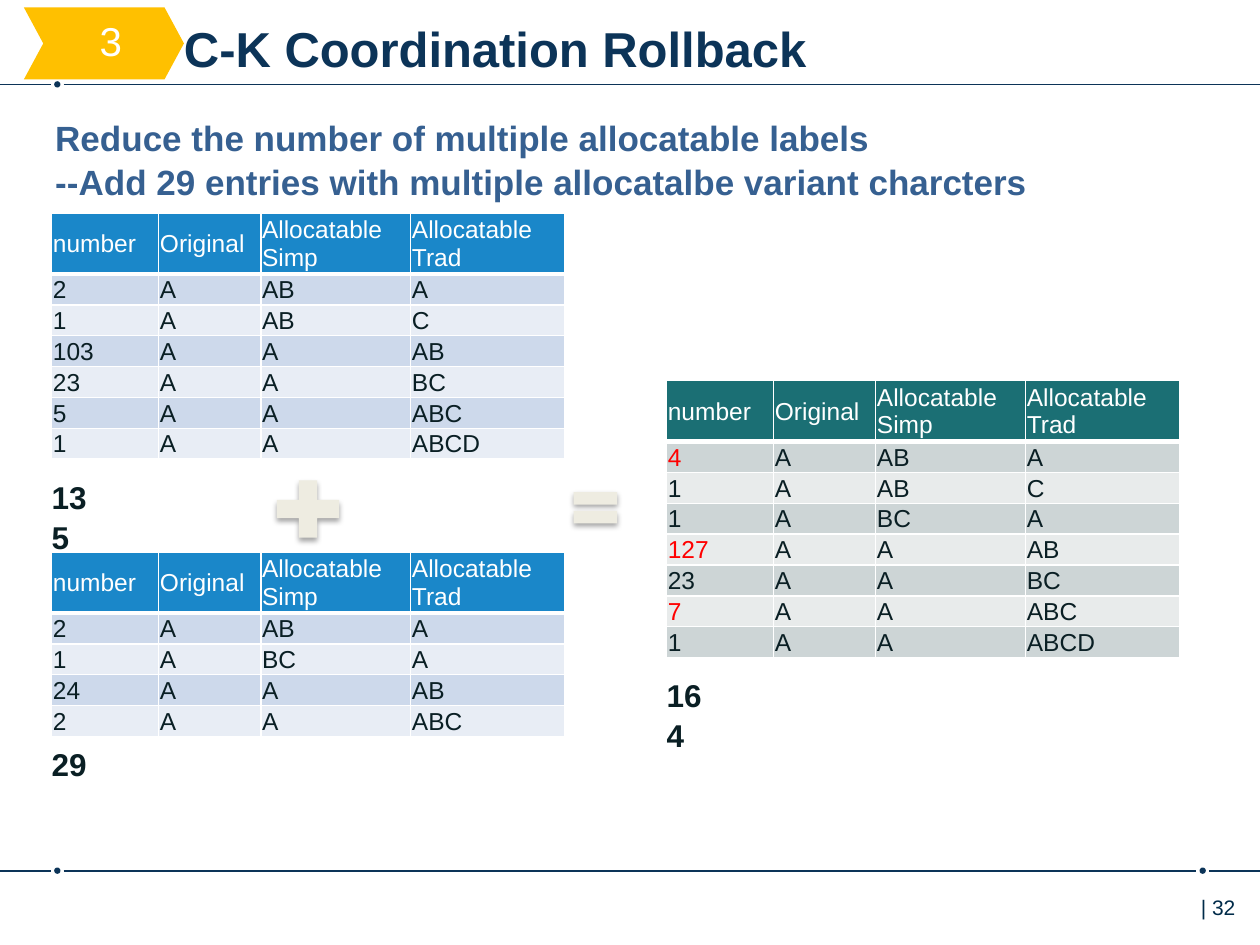
from dataclasses import dataclass

from lxml.etree import SubElement
from pptx import Presentation
from pptx.dml.color import RGBColor
from pptx.enum.shapes import MSO_CONNECTOR, MSO_SHAPE
from pptx.enum.text import MSO_ANCHOR, PP_ALIGN
from pptx.oxml import parse_xml
from pptx.oxml.ns import nsdecls, qn
from pptx.util import Emu, Inches, Pt

NAVY = RGBColor(0x0C, 0x34, 0x58)
PAGE_NAVY = RGBColor(0x00, 0x2B, 0x49)
STEEL = RGBColor(0x36, 0x60, 0x91)
INK = RGBColor(0x0A, 0x1F, 0x24)
WHITE = RGBColor(0xFF, 0xFF, 0xFF)
RED = RGBColor(0xFF, 0x00, 0x00)
AMBER = RGBColor(0xFF, 0xC0, 0x00)
CREAM = RGBColor(0xEE, 0xEC, 0xE1)
BLUE_HEAD = RGBColor(0x1A, 0x87, 0xC9)
BLUE_BANDS = RGBColor(0xCD, 0xD9, 0xEB), RGBColor(0xE8, 0xED, 0xF5)
TEAL_HEAD = RGBColor(0x1B, 0x6F, 0x74)
TEAL_BANDS = RGBColor(0xCD, 0xD5, 0xD6), RGBColor(0xE8, 0xEB, 0xEB)

FONT = "Arial"
COLS, ROWS = 100, 75
LEFT_COL, RIGHT_COL = 4.1, 52.9
TABLE_COLS = 8.5, 8.1, 11.9, 12.2
HEAD_ROW, BODY_ROW = 4.85, 2.45
HEADINGS = "number", "Original", "Allocatable\nSimp", "Allocatable\nTrad"
LEFT_DOT, RIGHT_DOT = 4.55, 95.45

prs = Presentation()
prs.slide_width, prs.slide_height = Inches(10), Inches(7.5)
s = prs.slides.add_slide(prs.slide_layouts[5])


@dataclass
class CountTable:
    col: float
    row: float
    head: RGBColor
    bands: tuple[RGBColor, RGBColor]
    body: list[str]
    total: str
    total_row: float
    total_width: float
    changed: tuple[str, ...] = ()


def grid(*lengths: float) -> list[Emu]:
    """Turn lengths in square grid units into EMU."""
    return [Emu(round(n * prs.slide_width / COLS)) for n in lengths]


def style(p, size: float, color: RGBColor, bold: bool = False) -> None:
    p.font.name, p.font.size, p.font.bold = FONT, Pt(size), bold
    p.font.color.rgb = color


def set_margins(frame, left: float, top: float, right: float, bottom: float) -> None:
    (frame.margin_left, frame.margin_top,
     frame.margin_right, frame.margin_bottom) = grid(left, top, right, bottom)


def add_text(text: str, box: tuple, size: float, color: RGBColor, bold: bool,
             margins: tuple, spacing: float = 1.0) -> None:
    tf = s.shapes.add_textbox(*grid(*box)).text_frame
    tf.word_wrap = True
    set_margins(tf, *margins)
    tf.text = text
    for p in tf.paragraphs:
        p.line_spacing = spacing
        style(p, size, color, bold)


def add_shape(kind: MSO_SHAPE, box: tuple, fill: RGBColor):
    sp = s.shapes.add_shape(kind, *grid(*box))
    sp.shadow.inherit = False
    sp.fill.solid()
    sp.fill.fore_color.rgb = fill
    sp.line.fill.background()
    return sp


def add_rule(row: float, dots: tuple[float, ...]) -> None:
    """Draw a full-width line broken by a gap around each dot."""
    starts = (0, *(d + 0.5 for d in dots))
    ends = (*(d - 0.5 for d in dots), COLS)
    for start, end in zip(starts, ends):
        line = s.shapes.add_connector(MSO_CONNECTOR.STRAIGHT, *grid(start, row, end, row))
        line.line.color.rgb, line.line.width = NAVY, Pt(1)
        SubElement(line._element.spPr, qn("a:effectLst"))
    for dot in dots:
        add_shape(MSO_SHAPE.OVAL, (dot - 0.25, row - 0.25, 0.5, 0.5), NAVY)


def add_operator(kind: MSO_SHAPE, box: tuple) -> None:
    """Add a cream maths sign with a soft shadow below it."""
    effects = add_shape(kind, box, CREAM)._element.spPr.find(qn("a:effectLst"))
    effects.append(parse_xml(
        f'<a:outerShdw {nsdecls("a")} blurRad="{Pt(3.1)}" dist="{Pt(1.8)}" dir="5400000"'
        ' rotWithShape="0"><a:srgbClr val="000000"><a:alpha val="35000"/></a:srgbClr>'
        '</a:outerShdw>'))


def add_borders(cell, bottom: float) -> None:
    props = cell._tc.get_or_add_tcPr()
    widths = {"lnL": 1, "lnR": 1, "lnT": 1, "lnB": bottom}
    for i, (side, width) in enumerate(widths.items()):
        props.insert(i, parse_xml(
            f'<a:{side} {nsdecls("a")} w="{Pt(width)}"><a:solidFill>'
            f'<a:srgbClr val="{WHITE}"/></a:solidFill></a:{side}>'))


def add_count_table(t: CountTable) -> None:
    rows = [HEADINGS, *(line.split() for line in t.body)]
    heights = [HEAD_ROW] + [BODY_ROW] * len(t.body)
    box = t.col, t.row, sum(TABLE_COLS), sum(heights)
    table = s.shapes.add_table(len(rows), len(TABLE_COLS), *grid(*box)).table
    for column, width in zip(table.columns, grid(*TABLE_COLS)):
        column.width = width
    for i, (texts, height) in enumerate(zip(rows, grid(*heights))):
        table.rows[i].height = height
        for j, text in enumerate(texts):
            cell = table.cell(i, j)
            cell.text = text
            cell.vertical_anchor = MSO_ANCHOR.MIDDLE
            set_margins(cell, 0.1, 0.1, 0.1, 0)
            cell.fill.solid()
            cell.fill.fore_color.rgb = t.bands[(i - 1) % 2] if i else t.head
            add_borders(cell, 1 if i else 3)
            color = WHITE if i == 0 else RED if j == 0 and text in t.changed else INK
            for p in cell.text_frame.paragraphs:
                style(p, 14, color)
    add_text(t.total, (t.col, t.total_row, t.total_width, 3), 18, INK, True,
             (0, 0, 0, 0), 1.05)


TABLES = [
    CountTable(LEFT_COL, 16.9, BLUE_HEAD, BLUE_BANDS,
               ["2 A AB A", "1 A AB C", "103 A A AB", "23 A A BC", "5 A A ABC", "1 A A ABCD"],
               "135", 37.8, 4.1),
    CountTable(LEFT_COL, 43.8, BLUE_HEAD, BLUE_BANDS,
               ["2 A AB A", "1 A BC A", "24 A A AB", "2 A A ABC"],
               "29", 59, 2.9),
    CountTable(RIGHT_COL, 30.2, TEAL_HEAD, TEAL_BANDS,
               ["4 A AB A", "1 A AB C", "1 A BC A", "127 A A AB", "23 A A BC", "7 A A ABC",
                "1 A A ABCD"],
               "164", 53.5, 4.1, ("4", "127", "7")),
]

add_rule(6.7, (LEFT_DOT,))
add_rule(69.1, (LEFT_DOT, RIGHT_DOT))
add_text("| 32", (92.9, 70.5, 7.1, 4), 12, PAGE_NAVY, False, (2.4, 0.5, 0, 0.5))

title = s.shapes.title
title.left, title.top, title.width, title.height = grid(14.6, 0.5, 77.1, 4.9)
tf = title.text_frame
tf.text = "C-K Coordination Rollback"
tf.vertical_anchor = MSO_ANCHOR.TOP
set_margins(tf, 0, 1, 0, 0)
p = tf.paragraphs[0]
p.alignment = PP_ALIGN.LEFT
style(p, 28, NAVY, True)

chevron = add_shape(MSO_SHAPE.CHEVRON, (1.9, 0.6, 12.7, 5.7), AMBER)
chevron.adjustments[0] = 0.27
tf = chevron.text_frame
tf.text = "3"
tf.vertical_anchor = MSO_ANCHOR.MIDDLE
set_margins(tf, 1.8, 0.4, 0.7, 0.4)
p = tf.paragraphs[0]
p.alignment, p.line_spacing = PP_ALIGN.CENTER, Pt(23.8)
style(p, 23, WHITE)

add_text("Reduce the number of multiple allocatable labels\n"
         "--Add 29 entries with multiple allocatalbe variant charcters",
         (3.4, 8.6, 87.6, 7.7), 20, STEEL, True, (1, 0.5, 1, 0.5), 1.05)
for count_table in TABLES:
    add_count_table(count_table)
add_operator(MSO_SHAPE.MATH_PLUS, (21.1, 37.3, 6.7, 6.2))
add_operator(MSO_SHAPE.MATH_EQUAL, (44.9, 38.2, 4.7, 4.2))

prs.save("out.pptx")
